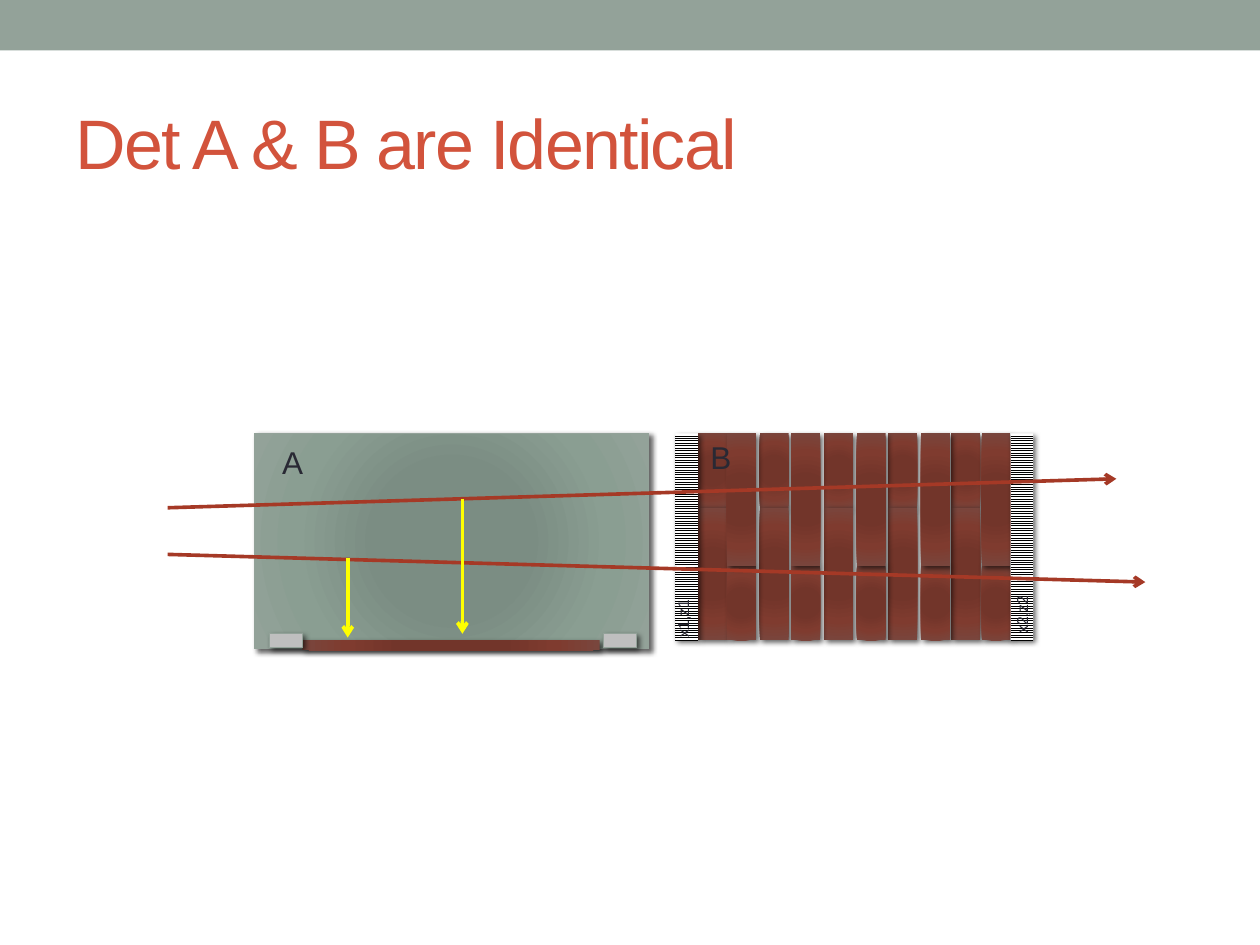
import dataclasses

import lxml.etree
import pptx
import pptx.dml.color
import pptx.enum.dml
import pptx.enum.shapes
import pptx.enum.text
import pptx.oxml
import pptx.oxml.ns
import pptx.util

CELL = 0.01  # inches per grid cell


@dataclasses.dataclass(frozen=True)
class Theme:
    font: str = "Arial"
    band: str = "93A299"
    title: str = "D2533C"
    text: str = "292934"
    clip: str = "BFBFBF"
    track: str = "A53926"
    drift: str = "FFFF00"
    black: str = "000000"
    white: str = "FFFFFF"
    gas: tuple = ((0, "7B8E82"), (34, "7B8D83"), (70, "8A9E92"), (100, "93A299"))
    strip: tuple = ((0, "743327"), (34, "72352A"), (70, "7F3B2F"), (100, "79463D"))
    title_size: int = 40
    label_size: int = 18
    axis_size: int = 9
    outline: float = 0.75
    arrow: float = 2.08


@dataclasses.dataclass(frozen=True)
class Box:
    """A region measured in grid cells."""
    left: int
    top: int
    width: int
    height: int

    def area(self, column, row, columns, rows):
        return Box(self.left + column, self.top + row, columns, rows)

    def point(self, column, row):
        return length(self.left + column), length(self.top + row)

    def frame(self):
        return [length(cells) for cells in dataclasses.astuple(self)]


THEME = Theme()
PAGE = Box(0, 0, 1000, 750)
DETECTOR_A = PAGE.area(202, 344, 313, 171)
DETECTOR_B = PAGE.area(536, 344, 284, 164)


def length(cells):
    return pptx.util.Inches(cells * CELL)


def colour(value):
    return pptx.dml.color.RGBColor.from_string(value)


def drawing_xml(markup):
    """Parse markup whose root tag has the slot NS for the drawing namespace."""
    return pptx.oxml.parse_xml(markup.replace("NS", pptx.oxml.ns.nsdecls("a"), 1))


def add_rect(shapes, box, line=None):
    shape = shapes.add_shape(pptx.enum.shapes.MSO_SHAPE.RECTANGLE, *box.frame())
    shape.shadow.inherit = False
    if line:
        shape.line.color.rgb = colour(line)
        shape.line.width = pptx.util.Pt(THEME.outline)
    else:
        shape.line.fill.background()
    return shape


def fill_solid(shape, value):
    shape.fill.solid()
    shape.fill.fore_color.rgb = colour(value)


def fill_radial(shape, stops):
    shape.fill.background()
    stop_xml = "".join(
        f'<a:gs pos="{share * 1000}"><a:srgbClr val="{value}"/></a:gs>'
        for share, value in stops)
    gradient = drawing_xml(
        f'<a:gradFill NS rotWithShape="1"><a:gsLst>{stop_xml}</a:gsLst>'
        '<a:path path="circle"><a:fillToRect l="100000" t="100000" '
        'r="100000" b="100000"/></a:path></a:gradFill>')
    properties = shape.element.spPr
    properties.replace(properties.find(pptx.oxml.ns.qn("a:noFill")), gradient)


def cast_shadow(shape):
    effects = shape.element.spPr.find(pptx.oxml.ns.qn("a:effectLst"))
    effects.append(drawing_xml(
        '<a:outerShdw NS blurRad="38100" dist="25400" dir="2700000" rotWithShape="0">'
        f'<a:srgbClr val="{THEME.black}"><a:alpha val="60000"/></a:srgbClr>'
        '</a:outerShdw>'))


def add_strip(shapes, box):
    strip = add_rect(shapes, box)
    fill_radial(strip, THEME.strip)
    cast_shadow(strip)


def add_text(shapes, box, words, size, value, wrap=True, grow=True):
    text_box = shapes.add_textbox(*box.frame())
    frame = text_box.text_frame
    frame.word_wrap = wrap
    if grow:
        frame.auto_size = pptx.enum.text.MSO_AUTO_SIZE.SHAPE_TO_FIT_TEXT
    span = frame.paragraphs[0].add_run()
    span.text = words
    span.font.name = THEME.font
    span.font.size = pptx.util.Pt(size)
    span.font.color.rgb = colour(value)
    return text_box


def add_arrow(shapes, start, end, value):
    arrow = shapes.add_connector(
        pptx.enum.shapes.MSO_CONNECTOR.STRAIGHT, *start, *end)
    arrow.line.color.rgb = colour(value)
    arrow.line.width = pptx.util.Pt(THEME.arrow)
    properties = arrow.element.spPr
    line = properties.find(pptx.oxml.ns.qn("a:ln"))
    lxml.etree.SubElement(line, pptx.oxml.ns.qn("a:tailEnd"), type="arrow")
    lxml.etree.SubElement(properties, pptx.oxml.ns.qn("a:effectLst"))


def draw_heading(shapes, box):
    fill_solid(add_rect(shapes, box.area(0, 0, box.width, 40)), THEME.band)
    title = add_text(shapes, box.area(50, 58, 900, 108), "Det A & B are Identical",
                     THEME.title_size, THEME.title, grow=False)
    title.text_frame.vertical_anchor = pptx.enum.text.MSO_ANCHOR.MIDDLE
    span = title.text_frame.paragraphs[0].runs[0]
    span.font._element.set("spc", "-100")


def draw_chamber(shapes, box):
    chamber = add_rect(shapes, box, THEME.band)
    fill_radial(chamber, THEME.gas)
    cast_shadow(chamber)


def draw_readout(shapes, box):
    """The strip along the chamber floor, with a clip at each end."""
    add_strip(shapes, box.area(38, 164, 236, 8))
    for column in (12, 277):
        clip = add_rect(shapes, box.area(column, 159, 26, 11), THEME.band)
        fill_solid(clip, THEME.clip)
        cast_shadow(clip)


def draw_strip_plane(shapes, box):
    """Strips split alternately high and low, between two hatched edges."""
    group = shapes.add_group_shape().shapes
    short, edge, width = 59, 18, 23
    tall = box.height - short
    columns = (18, 41, 67, 92, 118, 144, 169, 195, 219, 243)
    for column in columns[::2]:
        add_strip(group, box.area(column, 0, width, short))
        add_strip(group, box.area(column, short, width, tall))
    for column in columns[1::2]:
        add_strip(group, box.area(column, tall, width, short))
        add_strip(group, box.area(column, 0, width, tall))
    for column in (0, box.width - edge):
        hatch = add_rect(group, box.area(column, 0, edge, box.height))
        hatch.fill.patterned()
        hatch.fill.pattern = pptx.enum.dml.MSO_PATTERN.LIGHT_HORIZONTAL
        hatch.fill.fore_color.rgb = colour(THEME.black)
        hatch.fill.back_color.rgb = colour(THEME.white)
        cast_shadow(hatch)
    for words, column, row in (("x1,z1", -19, 134), ("x2,z2", 250, 131)):
        axis = add_text(group, box.area(column, row, 50, 25), words,
                        THEME.axis_size, THEME.text, wrap=False)
        axis.rotation = 270


def draw_tracks(shapes, box):
    for start, end in (((133, 403), (886, 380)), ((133, 440), (909, 462))):
        add_arrow(shapes, box.point(*start), box.point(*end), THEME.track)


def draw_drifts(shapes, box):
    for column, top, bottom in ((74, 99, 162), (165, 52, 159)):
        add_arrow(shapes, box.point(column, top), box.point(column, bottom), THEME.drift)


def draw_label(shapes, box, words):
    add_text(shapes, box, words, THEME.label_size, THEME.text)


def main():
    deck = pptx.Presentation()
    deck.slide_width, deck.slide_height = length(PAGE.width), length(PAGE.height)
    shapes = deck.slides.add_slide(deck.slide_layouts[6]).shapes
    draw_heading(shapes, PAGE)
    draw_chamber(shapes, DETECTOR_A)
    draw_strip_plane(shapes, DETECTOR_B)
    draw_readout(shapes, DETECTOR_A)
    draw_tracks(shapes, PAGE)
    draw_drifts(shapes, DETECTOR_A)
    draw_label(shapes, DETECTOR_A.area(12, 3, 47, 40), "A")
    draw_label(shapes, DETECTOR_B.area(18, -1, 47, 40), "B")
    deck.save("out.pptx")


if __name__ == "__main__":
    main()
